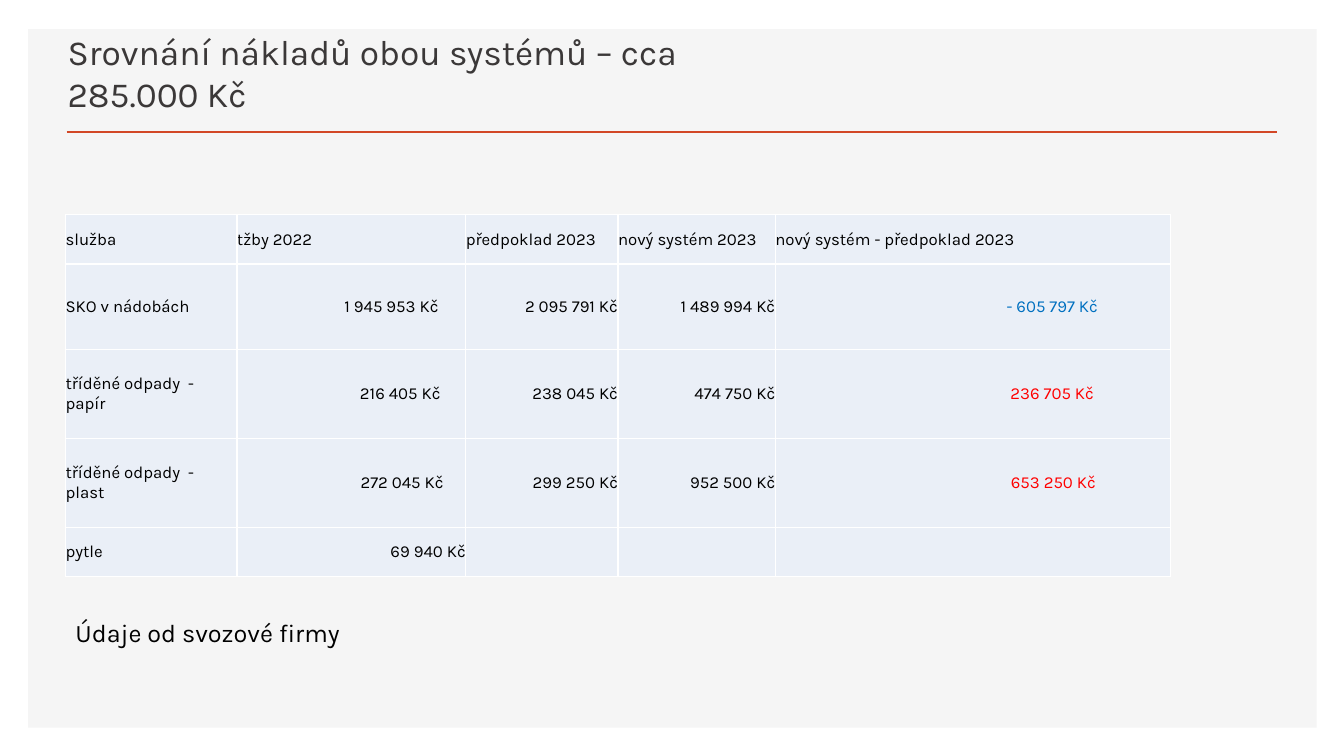
from dataclasses import dataclass

from lxml.etree import SubElement
from pptx import Presentation
from pptx.dml.color import RGBColor
from pptx.enum.shapes import MSO_CONNECTOR, MSO_SHAPE
from pptx.enum.text import MSO_ANCHOR, MSO_AUTO_SIZE, PP_ALIGN
from pptx.oxml.ns import qn
from pptx.slide import Slide
from pptx.table import _Cell
from pptx.text.text import TextFrame
from pptx.util import Inches, Pt

COLORS = {
    "panel": "F5F5F5",
    "accent": "D24726",
    "title": "3B3838",
    "text": "000000",
    "cell": "EAEFF7",
    "border": "FFFFFF",
    "saving": "0070C0",
    "increase": "FF0000",
}
FONT = "Karla"


@dataclass
class Entry:
    text: str
    indent: float = 0
    color: str = "text"
    align: PP_ALIGN = PP_ALIGN.RIGHT


def label(text: str) -> Entry:
    return Entry(text, align=PP_ALIGN.LEFT)


COLUMN_WIDTHS = [1.7, 2.27, 1.51, 1.56, 3.92]
ROW_HEIGHTS = [0.49, 0.85, 0.88, 0.88, 0.49]
COSTS = [
    [label(heading) for heading in (
        "služba", "tžby 2022", "předpoklad 2023", "nový systém 2023",
        "nový systém - předpoklad 2023")],
    [label("SKO v nádobách"), Entry("1 945 953 Kč", 0.27), Entry("2 095 791 Kč"),
     Entry("1 489 994 Kč"), Entry("- 605 797 Kč", 0.72, "saving")],
    [label("tříděné odpady  - papír"), Entry("216 405 Kč", 0.25), Entry("238 045 Kč"),
     Entry("474 750 Kč"), Entry("236 705 Kč", 0.76, "increase")],
    [label("tříděné odpady  - plast"), Entry("272 045 Kč", 0.22), Entry("299 250 Kč"),
     Entry("952 500 Kč"), Entry("653 250 Kč", 0.74, "increase")],
    [label("pytle"), Entry("69 940 Kč"), Entry(""), Entry(""), Entry("")],
]


def rgb(name: str) -> RGBColor:
    return RGBColor.from_string(COLORS[name])


def write(frame: TextFrame, text: str, *, size: float, color: str = "text",
          align: PP_ALIGN = PP_ALIGN.LEFT) -> None:
    paragraph = frame.paragraphs[0]
    paragraph.alignment = align
    run = paragraph.add_run()
    run.text = text
    run.font.name = FONT
    run.font.size = Pt(size)
    run.font.color.rgb = rgb(color)


def add_borders(cell: _Cell) -> None:
    properties = cell._tc.get_or_add_tcPr()
    for side in ("a:lnL", "a:lnR", "a:lnT", "a:lnB"):
        line = SubElement(properties, qn(side), w=str(Pt(1)))
        fill = SubElement(line, qn("a:solidFill"))
        SubElement(fill, qn("a:srgbClr"), val=COLORS["border"])


def add_title(slide: Slide) -> None:
    title = slide.shapes.title
    title.left, title.top = Inches(0.57), Inches(0.49)
    title.width, title.height = Inches(7.52), Inches(0.7)
    frame = title.text_frame
    frame.word_wrap = True
    frame.auto_size = MSO_AUTO_SIZE.NONE
    frame.vertical_anchor = MSO_ANCHOR.BOTTOM
    write(frame, "Srovnání nákladů obou systémů – cca 285.000 Kč",
          size=25.2, color="title")


def add_backdrop(slide: Slide) -> None:
    """Place the grey panel and the accent rule behind the title."""
    panel = slide.shapes.add_shape(
        MSO_SHAPE.RECTANGLE, Inches(0.28), Inches(0.29), Inches(12.78), Inches(6.93))
    panel.shadow.inherit = False
    panel.fill.solid()
    panel.fill.fore_color.rgb = rgb("panel")
    panel.line.fill.background()

    rule = slide.shapes.add_connector(
        MSO_CONNECTOR.STRAIGHT, Inches(0.66), Inches(1.31), Inches(12.67), Inches(1.31))
    rule.line.color.rgb = rgb("accent")
    rule.line.width = Pt(2)
    SubElement(rule.element.spPr, qn("a:effectLst"))

    for backdrop in (panel, rule):
        slide.shapes.title.element.addprevious(backdrop.element)


def fill_cell(cell: _Cell, entry: Entry) -> None:
    cell.margin_left = cell.margin_top = cell.margin_bottom = 0
    cell.margin_right = Inches(entry.indent)
    cell.vertical_anchor = MSO_ANCHOR.MIDDLE
    add_borders(cell)
    cell.fill.solid()
    cell.fill.fore_color.rgb = rgb("cell")
    if entry.text:
        write(cell.text_frame, entry.text, size=12, color=entry.color, align=entry.align)


def add_cost_table(slide: Slide) -> None:
    costs = slide.shapes.add_table(
        len(ROW_HEIGHTS), len(COLUMN_WIDTHS), Inches(0.65), Inches(2.13),
        Inches(sum(COLUMN_WIDTHS)), Inches(sum(ROW_HEIGHTS))).table
    costs.first_row = costs.horz_banding = False
    for column, width in zip(costs.columns, COLUMN_WIDTHS):
        column.width = Inches(width)
    for row, height, entries in zip(costs.rows, ROW_HEIGHTS, COSTS):
        row.height = Inches(height)
        for cell, entry in zip(row.cells, entries):
            fill_cell(cell, entry)


def add_data_credit(slide: Slide) -> None:
    credit = slide.shapes.add_textbox(Inches(0.65), Inches(6.08), Inches(4.4), Inches(0.4))
    credit.text_frame.word_wrap = True
    credit.text_frame.auto_size = MSO_AUTO_SIZE.SHAPE_TO_FIT_TEXT
    write(credit.text_frame, "Údaje od svozové firmy", size=18)


def main() -> None:
    presentation = Presentation()
    presentation.slide_width = Inches(13.33)
    presentation.slide_height = Inches(7.5)
    slide = presentation.slides.add_slide(presentation.slide_layouts.get_by_name("Title Only"))
    add_title(slide)
    add_backdrop(slide)
    add_cost_table(slide)
    add_data_credit(slide)
    presentation.save("out.pptx")


if __name__ == "__main__":
    main()
